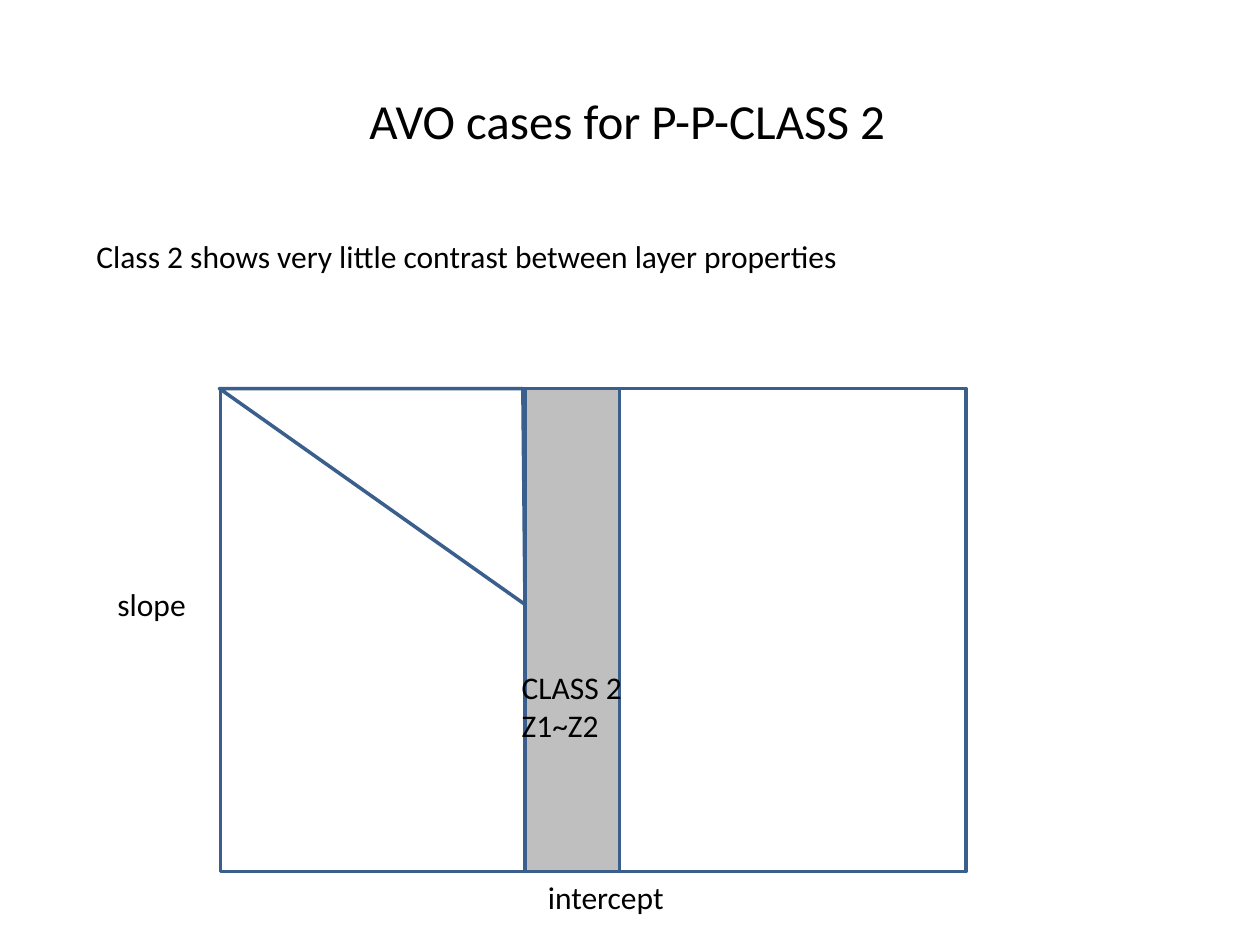
import pptx
import pptx.util
import pptx.dml.color
import pptx.enum.shapes
import pptx.enum.text

Pt = pptx.util.Pt
RGBColor = pptx.dml.color.RGBColor

BLACK = RGBColor(0x00, 0x00, 0x00)
BLUE = RGBColor(0x3A, 0x5F, 0x8C)
GREY = RGBColor(0xBF, 0xBF, 0xBF)


def add_text(s, left, top, width, height, lines, size=18):
    tf = s.shapes.add_textbox(Pt(left), Pt(top), Pt(width), Pt(height)).text_frame
    tf.word_wrap = True
    tf.auto_size = pptx.enum.text.MSO_AUTO_SIZE.SHAPE_TO_FIT_TEXT
    for i, line in enumerate(lines):
        p = tf.paragraphs[0] if i == 0 else tf.add_paragraph()
        r = p.add_run()
        r.text = line
        for name, value in {"name": "Calibri", "size": Pt(size)}.items():
            setattr(r.font, name, value)
        r.font.color.rgb = BLACK


def style_shape(sp, fill=None):
    sp.shadow.inherit = False
    if fill is None:
        sp.fill.background()
    else:
        sp.fill.solid()
        sp.fill.fore_color.rgb = fill
    sp.line.color.rgb = BLUE
    sp.line.width = Pt(2)


def add_rect(s, left, top, width, height, fill=None):
    kind = pptx.enum.shapes.MSO_SHAPE.RECTANGLE
    sp = s.shapes.add_shape(kind, Pt(left), Pt(top), Pt(width), Pt(height))
    style_shape(sp, fill)


def add_heading(s, left, top):
    add_text(s, left + 156, top, 396, 41, ["AVO cases for P-P-CLASS 2"], 28)
    add_text(s, left, top + 84, 552, 29,
             ["Class 2 shows very little contrast between layer properties"])


def add_crossplot(s, left, top, width, height):
    band_left, band_width = left + 174, 54
    add_rect(s, left, top, width, height)
    add_text(s, left - 66, top + 109, 66, 29, ["slope"])
    add_text(s, left + 180, top + height, 108, 29, ["intercept"])

    builder = s.shapes.build_freeform(Pt(left - 0.6), Pt(top))
    builder.add_line_segments(
        [(Pt(band_left), Pt(top + 123.4)), (Pt(band_left - 1.2), Pt(top))], close=True)
    style_shape(builder.convert_to_shape())

    add_rect(s, band_left, top, band_width, height, GREY)
    add_text(s, band_left - 9, top + 156, 102, 51, ["CLASS 2", "Z1~Z2"])


def main():
    prs = pptx.Presentation()
    prs.slide_width, prs.slide_height = Pt(720), Pt(540)
    s = prs.slides.add_slide(prs.slide_layouts[6])
    add_heading(s, 48, 48)
    add_crossplot(s, 126, 222, 426, 276)
    prs.save("out.pptx")


if __name__ == "__main__":
    main()
